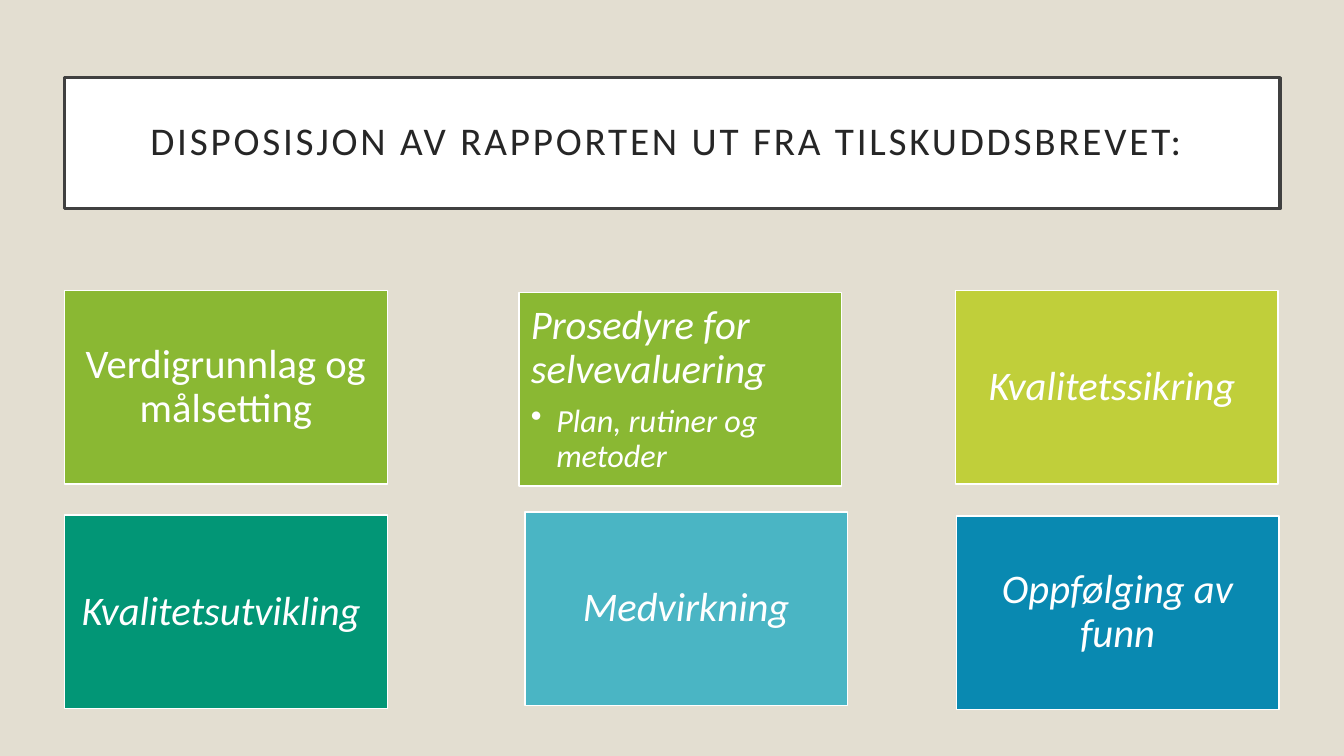
from pptx import Presentation
from pptx.dml.color import RGBColor
from pptx.enum import shapes, text
from pptx.oxml.ns import qn
from pptx.util import Cm, Pt
from lxml import etree

HUES = {"back": "E3DED1", "white": "FFFFFF", "edge": "404040", "ink": "262626",
        "green": "8AB833", "lime": "C0CF3A", "teal": "029676",
        "aqua": "4AB5C4", "blue": "0989B1"}
FACE = "Calibri"
WIDE, HIGH = 8.13, 4.88  # card size in cm

# Cards: left, top, hue, italic, heading, bullet
CARDS = [
    (1.63, 7.32, "green", False, "Verdigrunnlag og målsetting", None),
    (13.08, 7.37, "green", True, "Prosedyre for selvevaluering",
     "Plan, rutiner og metoder"),
    (24.08, 7.32, "lime", True, "Kvalitetssikring ", None),
    (1.63, 12.98, "teal", True, "Kvalitetsutvikling ", None),
    (13.23, 12.9, "aqua", True, "Medvirkning", None),
    (24.1, 13, "blue", True, "Oppfølging av funn", None),
]


def tint(name):
    return RGBColor.from_string(HUES[name])


def apply(item, form):
    for key, val in form.items():
        setattr(item, key, val)


def panel(slide, box, fill, edge, width, inset, anchor):
    """Add a filled, outlined rectangle and return its text frame."""
    rect = slide.shapes.add_shape(shapes.MSO_SHAPE.RECTANGLE,
                                  *[Cm(n) for n in box])
    rect.shadow.inherit = False
    rect.fill.solid()
    rect.fill.fore_color.rgb = tint(fill)
    rect.line.color.rgb = tint(edge)
    rect.line.width = Pt(width)
    frame = rect.text_frame
    sides = ("left", "top", "right", "bottom")
    apply(frame, {f"margin_{side}": Cm(inset) for side in sides})
    apply(frame, {"word_wrap": True, "vertical_anchor": anchor})
    return frame


def write(para, words, size, hue, align, italic=False, after=0):
    apply(para, {"alignment": align, "line_spacing": 0.9,
                 "space_after": Pt(after)})
    run = para.add_run()
    run.text = words
    apply(run.font, {"name": FACE, "size": Pt(size), "italic": italic})
    run.font.color.rgb = tint(hue)
    return run


def bullet(para, indent):
    props = para._p.get_or_add_pPr()
    props.set("marL", str(Cm(indent)))
    props.set("indent", str(-Cm(indent)))
    etree.SubElement(props, qn("a:buChar")).set("char", "•")


def title(slide, box):
    frame = panel(slide, box, "white", "edge", 2.5, 0.5,
                  text.MSO_ANCHOR.MIDDLE)
    run = write(frame.paragraphs[0],
                "DISPOSISJON AV RAPPORTEN UT FRA TILSKUDDSBREVET: ",
                28, "ink", text.PP_ALIGN.CENTER)
    run.font._element.set("spc", "200")


def card(slide, box, hue, italic, head, point):
    anchor, align = text.MSO_ANCHOR.MIDDLE, text.PP_ALIGN.CENTER
    if point:
        anchor, align = text.MSO_ANCHOR.TOP, text.PP_ALIGN.LEFT
    frame = panel(slide, box, hue, "white", 1, 0.3, anchor)
    write(frame.paragraphs[0], head, 29, "white", align, italic,
          9 if point else 0)
    if point:
        para = frame.add_paragraph()
        write(para, point, 23, "white", align, italic)
        bullet(para, 0.64)


def main():
    deck = Presentation()
    apply(deck, {"slide_width": Cm(33.87), "slide_height": Cm(19.05)})
    slide = deck.slides.add_slide(deck.slide_layouts[6])
    slide.background.fill.solid()
    slide.background.fill.fore_color.rgb = tint("back")

    title(slide, (1.63, 1.96, 30.63, 3.3))
    for left, top, *rest in CARDS:
        card(slide, (left, top, WIDE, HIGH), *rest)
    deck.save("out.pptx")


if __name__ == "__main__":
    main()
